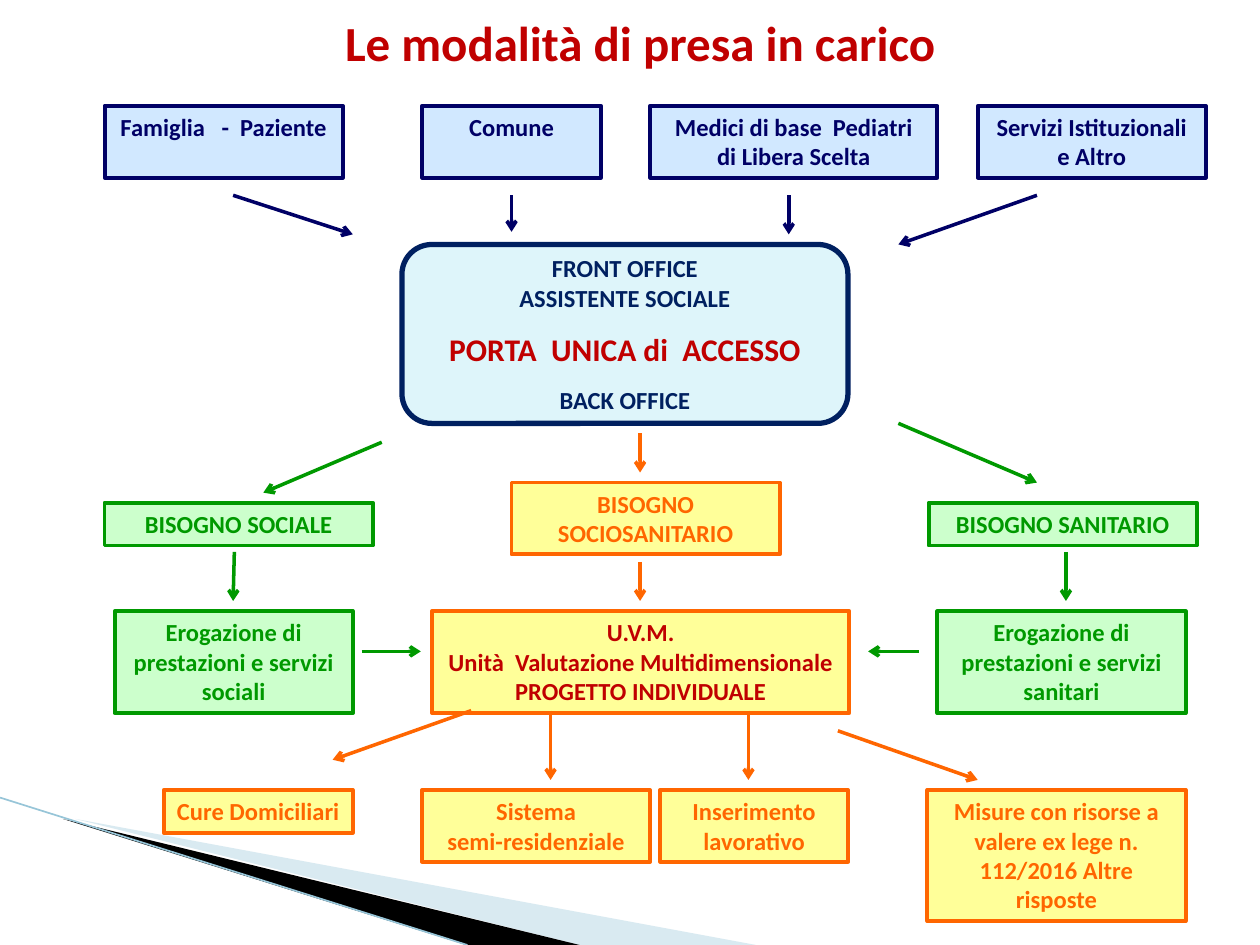
from pptx import Presentation
from pptx.dml.color import RGBColor as RGB
from pptx.enum.shapes import MSO_CONNECTOR as CONN, MSO_SHAPE as SHAPE
from pptx.enum.text import MSO_ANCHOR as ANCHOR, PP_ALIGN as ALIGN
from pptx.oxml.ns import qn
from pptx.util import Inches, Pt
from lxml.etree import SubElement

C = {
    "navy": "000066", "sky": "D1E8FF", "ink": "002060", "ice": "DEF5FA",
    "red": "C00000", "orange": "FF6600", "yellow": "FFFF99",
    "green": "009900", "mint": "CCFFCC",
    "haze": "A0CBDC", "edge": "97C5D8", "black": "000000",
}
FONT = {"name": "Calibri", "bold": True}

prs = Presentation()
prs.slide_width, prs.slide_height = Inches(10), Inches(7.5)
s = prs.slides.add_slide(prs.slide_layouts[6])
col, row = prs.slide_width // 100, prs.slide_height // 75


def write(tf, lines, anchor=ANCHOR.TOP):
    for k, v in {"word_wrap": True, "vertical_anchor": anchor}.items():
        setattr(tf, k, v)
    for i, (text, size, color, gap) in enumerate(lines):
        p = tf.add_paragraph() if i else tf.paragraphs[0]
        p.alignment = ALIGN.CENTER
        if gap:
            p.space_before = Pt(gap)
        r = p.add_run()
        r.text = text
        for k, v in {**FONT, "size": Pt(size)}.items():
            setattr(r.font, k, v)
        r.font.color.rgb = RGB.from_string(C[color])


def line(x1, y1, x2, y2, color, width, arrow=True):
    sp = s.shapes.add_connector(CONN.STRAIGHT, int(x1 * col), int(y1 * row),
                                int(x2 * col), int(y2 * row))
    sp.line.color.rgb = RGB.from_string(C[color])
    sp.line.width = Pt(width)
    if arrow:
        SubElement(sp.line._get_or_add_ln(), qn("a:tailEnd"), type="arrow")
    SubElement(sp._element.spPr, qn("a:effectLst"))


wedges = [
    ("haze", 40, [(5.5, 65), (59.5, 75), (45.6, 75)]),
    ("black", 100, [(5.3, 64.9), (45.7, 75), (37.2, 75)]),
]
for color, alpha, (start, *rest) in wedges:
    fb = s.shapes.build_freeform(*start, scale=(col, row))
    fb.add_line_segments(rest, close=True)
    sp = fb.convert_to_shape()
    sp.shadow.inherit = False
    sp.fill.solid()
    sp.fill.fore_color.rgb = RGB.from_string(C[color])
    sp.line.fill.background()
    if alpha < 100:
        clr = sp._element.spPr.find(qn("a:solidFill"))[0]
        SubElement(clr, qn("a:alpha"), val=str(alpha * 1000))
line(0, 63.3, 37.1, 75, "edge", 0.95, arrow=False)

title = s.shapes.add_textbox(int(-0.4 * col), int(0.5 * row),
                             int(102.4 * col), int(5.7 * row))
write(title.text_frame, [("Le modalità di presa in carico", 28, "red", 0)])

H = {1: 3.4, 2: 5.7, 3: 8.1, 4: 10.4}
TOP = {"sources": 8.4, "needs": 39.9, "joint need": 38.3, "care": 48.5, "answers": 62.7}
boxes = [
    (8.3, "sources", 18.9, 2, "navy", "sky", "navy", ["Famiglia   -  Paziente"]),
    (33.5, "sources", 14.2, 2, "navy", "sky", "navy", ["Comune"]),
    (51.6, "sources", 22.8, 2, "navy", "sky", "navy",
     ["Medici di base  Pediatri di Libera Scelta"]),
    (77.6, "sources", 18.1, 2, "navy", "sky", "navy", ["Servizi Istituzionali e Altro"]),
    (40.6, "joint need", 21.3, 2, "orange", "yellow", "orange", ["BISOGNO SOCIOSANITARIO"]),
    (34.3, "care", 33.1, 3, "orange", "yellow", "red",
     ["U.V.M.", "Unità  Valutazione Multidimensionale", "PROGETTO INDIVIDUALE"]),
    (8.3, "needs", 21.3, 1, "green", "mint", "green", ["BISOGNO SOCIALE"]),
    (73.7, "needs", 21.3, 1, "green", "mint", "green", ["BISOGNO SANITARIO"]),
    (9.1, "care", 18.9, 3, "green", "mint", "green",
     ["Erogazione di prestazioni e servizi sociali"]),
    (74.4, "care", 19.7, 3, "green", "mint", "green",
     ["Erogazione di prestazioni e servizi sanitari"]),
    (13, "answers", 15, 1, "orange", "yellow", "orange", ["Cure Domiciliari"]),
    (33.5, "answers", 18.1, 2, "orange", "yellow", "orange",
     ["Sistema", "semi-residenziale"]),
    (52.4, "answers", 14.9, 2, "orange", "yellow", "orange", ["Inserimento lavorativo"]),
    (73.6, "answers", 20.5, 4, "orange", "yellow", "orange",
     ["Misure con risorse a valere ex lege n. 112/2016 Altre risposte"]),
]
shapes = [(SHAPE.ROUNDED_RECTANGLE, 31.9, 19.4, 35.4, 14.2, "ink", "ice", 3, ANCHOR.MIDDLE, [
    ("FRONT OFFICE", 14, "ink", 0),
    ("ASSISTENTE SOCIALE", 14, "ink", 0),
    ("PORTA  UNICA di  ACCESSO", 18, "red", 10),
    ("BACK OFFICE", 14, "ink", 10),
])]
for x, tier, w, n, edge, fill, ink, texts in boxes:
    shapes.append((SHAPE.RECTANGLE, x, TOP[tier], w, H[n], edge, fill, 2.25, ANCHOR.TOP,
                   [(t, 14, ink, 0) for t in texts]))
for kind, x, y, w, h, edge, fill, width, anchor, lines in shapes:
    sp = s.shapes.add_shape(kind, int(x * col), int(y * row), int(w * col), int(h * row))
    sp.shadow.inherit = False
    sp.fill.solid()
    sp.fill.fore_color.rgb = RGB.from_string(C[fill])
    sp.line.color.rgb = RGB.from_string(C[edge])
    sp.line.width = Pt(width)
    write(sp.text_frame, lines, anchor)

arrows = {
    "navy": [(18.5, 15.5, 28, 18.6), (82.3, 15.5, 71.3, 19.4),
             (62.6, 15.5, 62.6, 18.6), (40.6, 15.5, 40.6, 18.4)],
    "green": [(71.3, 33.6, 82.3, 38.3), (30.3, 35.1, 20.9, 39.1),
              (18.6, 43.8, 18.5, 47.7), (84.6, 43.8, 84.6, 47.7),
              (28.7, 51.7, 33.4, 51.7), (72.9, 51.7, 68.9, 51.7)],
    "orange": [(50.8, 34.4, 50.8, 37.5), (50.8, 44.6, 50.8, 47.7),
               (66.5, 58, 77.6, 61.9), (37.4, 56.4, 26.4, 60.3),
               (43.7, 56.4, 43.7, 61.9), (59.4, 56.4, 59.4, 61.9)],
}
for color, ends in arrows.items():
    for end in ends:
        line(*end, color, 2)

prs.save("out.pptx")
